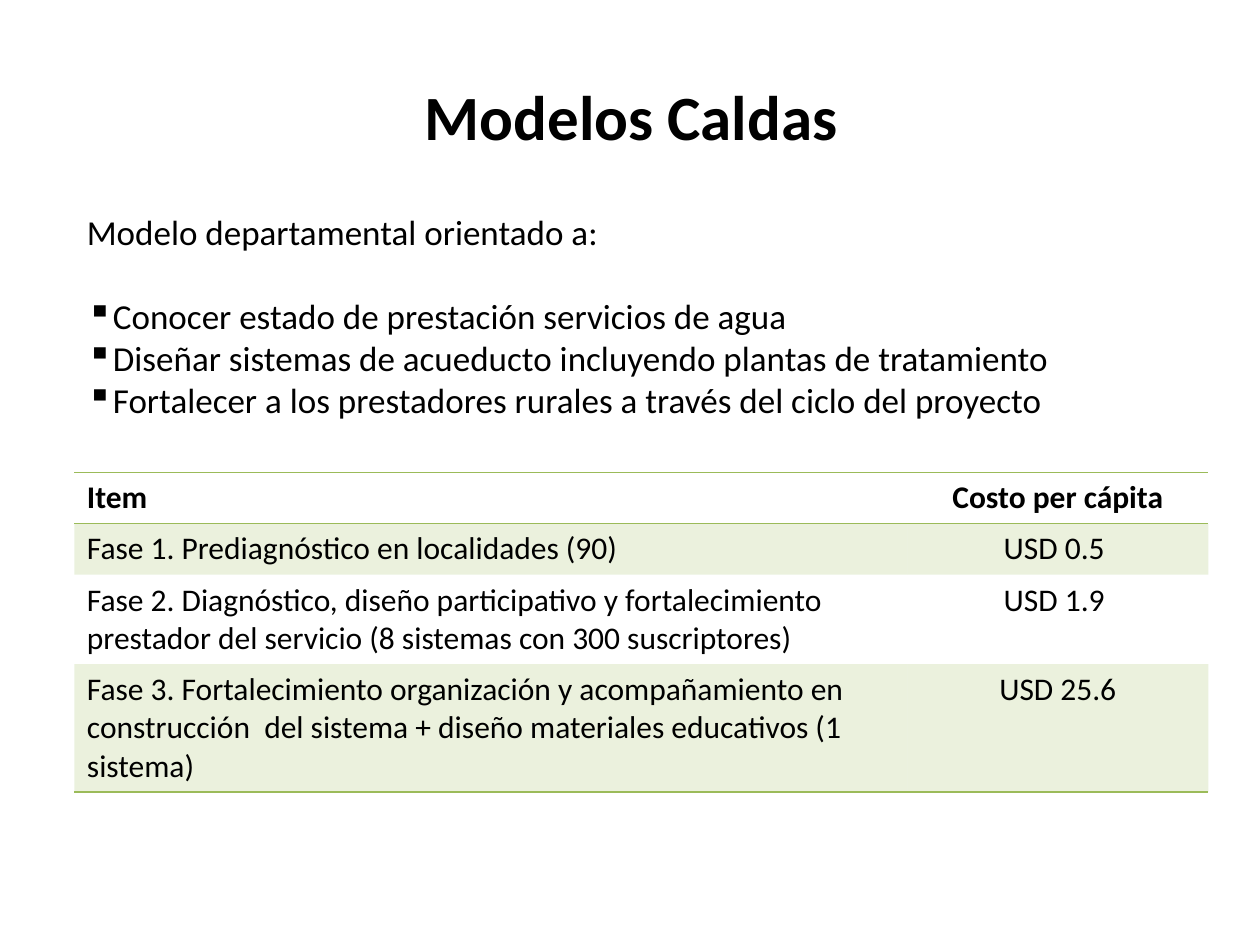
from lxml import etree
from pptx import Presentation
from pptx.dml.color import RGBColor
from pptx.enum import text
from pptx.oxml import ns
from pptx.util import Pt

BLACK = RGBColor(0x00, 0x00, 0x00)
GREEN = RGBColor(0x9B, 0xBB, 0x59)
NO_GRID_STYLE = "{2D5ABB26-0587-4C30-8999-92F81FD0307C}"


def write(paragraph, wording, size, bold=False, align=text.PP_ALIGN.LEFT):
    paragraph.alignment = align
    run = paragraph.add_run()
    run.text = wording
    font_format = {"name": "Calibri", "size": Pt(size), "bold": bold}
    for attribute, value in font_format.items():
        setattr(run.font, attribute, value)
    run.font.color.rgb = BLACK


def add_border(cell, side):
    line = etree.SubElement(cell._tc.get_or_add_tcPr(), ns.qn(f"a:{side}"), w=str(Pt(1)))
    fill = etree.SubElement(line, ns.qn("a:solidFill"))
    etree.SubElement(fill, ns.qn("a:srgbClr"), val=str(GREEN))


prs = Presentation()
prs.slide_width, prs.slide_height = Pt(720), Pt(540)
slide = prs.slides.add_slide(prs.slide_layouts[5])

# Title
title = slide.shapes.title
title.left, title.top, title.width, title.height = Pt(36.7), Pt(20.9), Pt(648), Pt(90)
title.text_frame.vertical_anchor = text.MSO_ANCHOR.MIDDLE
write(title.text_frame.paragraphs[0], "Modelos Caldas", 36, True, text.PP_ALIGN.CENTER)

# Cost table
costs = [
    ("Item", "Costo per cápita"),
    ("Fase 1. Prediagnóstico en localidades (90)", "USD 0.5 "),
    ("Fase 2. Diagnóstico, diseño participativo y fortalecimiento "
     "prestador del servicio (8 sistemas con 300 suscriptores)", "USD 1.9 "),
    ("Fase 3. Fortalecimiento organización y acompañamiento en "
     "construcción  del sistema + diseño materiales educativos (1 sistema)", "USD 25.6"),
]
alignments = (text.PP_ALIGN.LEFT, text.PP_ALIGN.CENTER)
row_height = 29.2
table = slide.shapes.add_table(
    len(costs), 2, Pt(42.5), Pt(270), Pt(648), Pt(row_height * len(costs))).table
table._tbl.tblPr.find(ns.qn("a:tableStyleId")).text = NO_GRID_STYLE
for column, width in zip(table.columns, (476, 172)):
    column.width = Pt(width)

for r, row in enumerate(costs):
    table.rows[r].height = Pt(row_height)
    for c, wording in enumerate(row):
        cell = table.cell(r, c)
        write(cell.text_frame.paragraphs[0], wording, 18, r == 0, alignments[c])
        if r == 0:
            add_border(cell, "lnT")
        if r in (0, len(costs) - 1):
            add_border(cell, "lnB")
        # Translucent band on every second row
        if r % 2:
            cell.fill.solid()
            cell.fill.fore_color.rgb = GREEN
            tint = cell._tc.tcPr.find(ns.qn("a:solidFill")).find(ns.qn("a:srgbClr"))
            etree.SubElement(tint, ns.qn("a:alpha"), val="20000")
        else:
            cell.fill.background()

# Aims of the model
aims = slide.shapes.add_textbox(Pt(42.5), Pt(116.6), Pt(646.6), Pt(128)).text_frame
aims.word_wrap = True
aims.auto_size = text.MSO_AUTO_SIZE.SHAPE_TO_FIT_TEXT
intro = aims.paragraphs[0]
write(intro, "Modelo departamental orientado a:", 20)
intro.space_after = Pt(24)
for aim in (
    "Conocer estado de prestación servicios de agua",
    "Diseñar sistemas de acueducto incluyendo plantas de tratamiento",
    "Fortalecer a los prestadores rurales a través del ciclo del proyecto",
):
    paragraph = aims.add_paragraph()
    write(paragraph, aim, 20)
    etree.SubElement(paragraph._p.get_or_add_pPr(), ns.qn("a:buChar"), char="▪")

prs.save("out.pptx")
